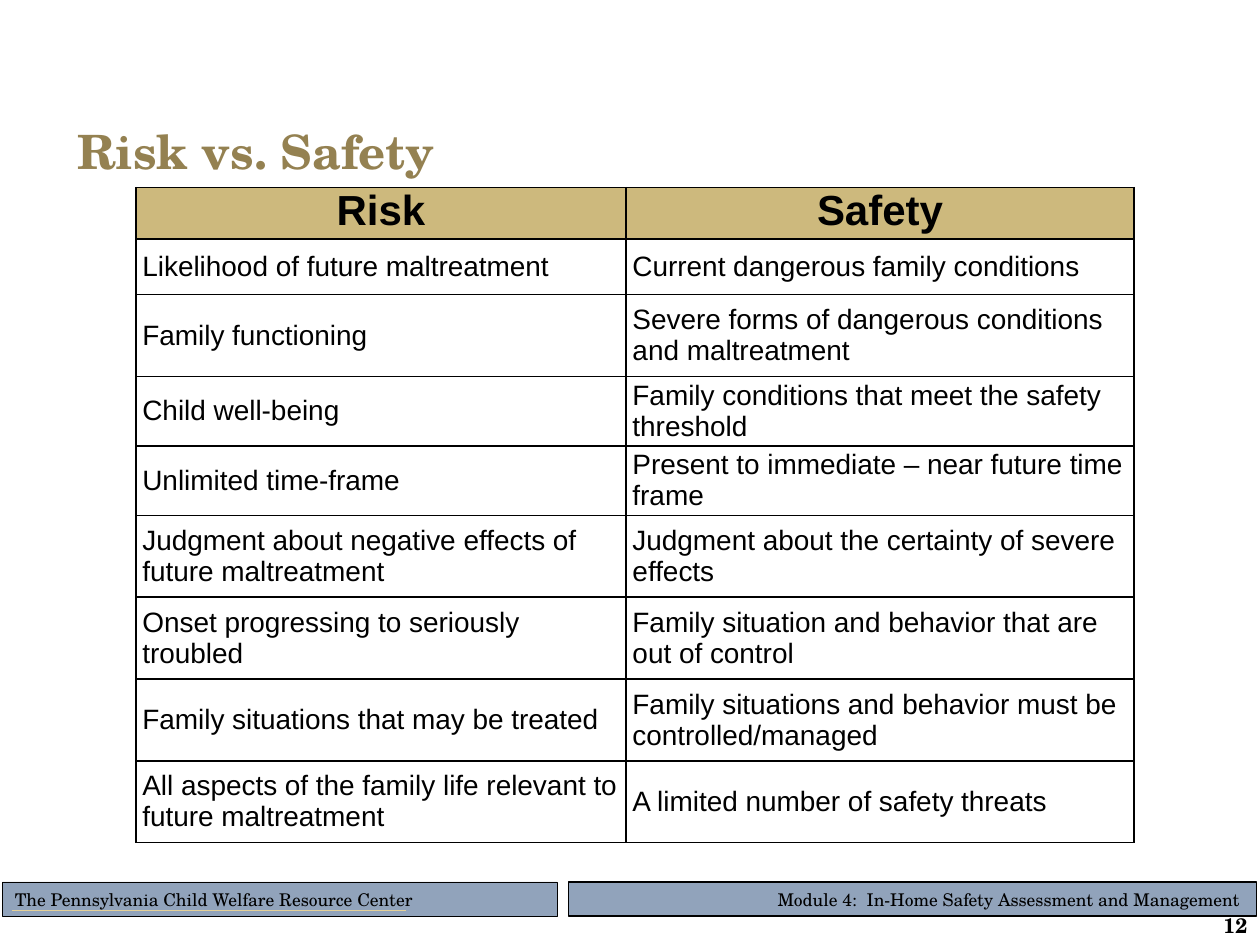
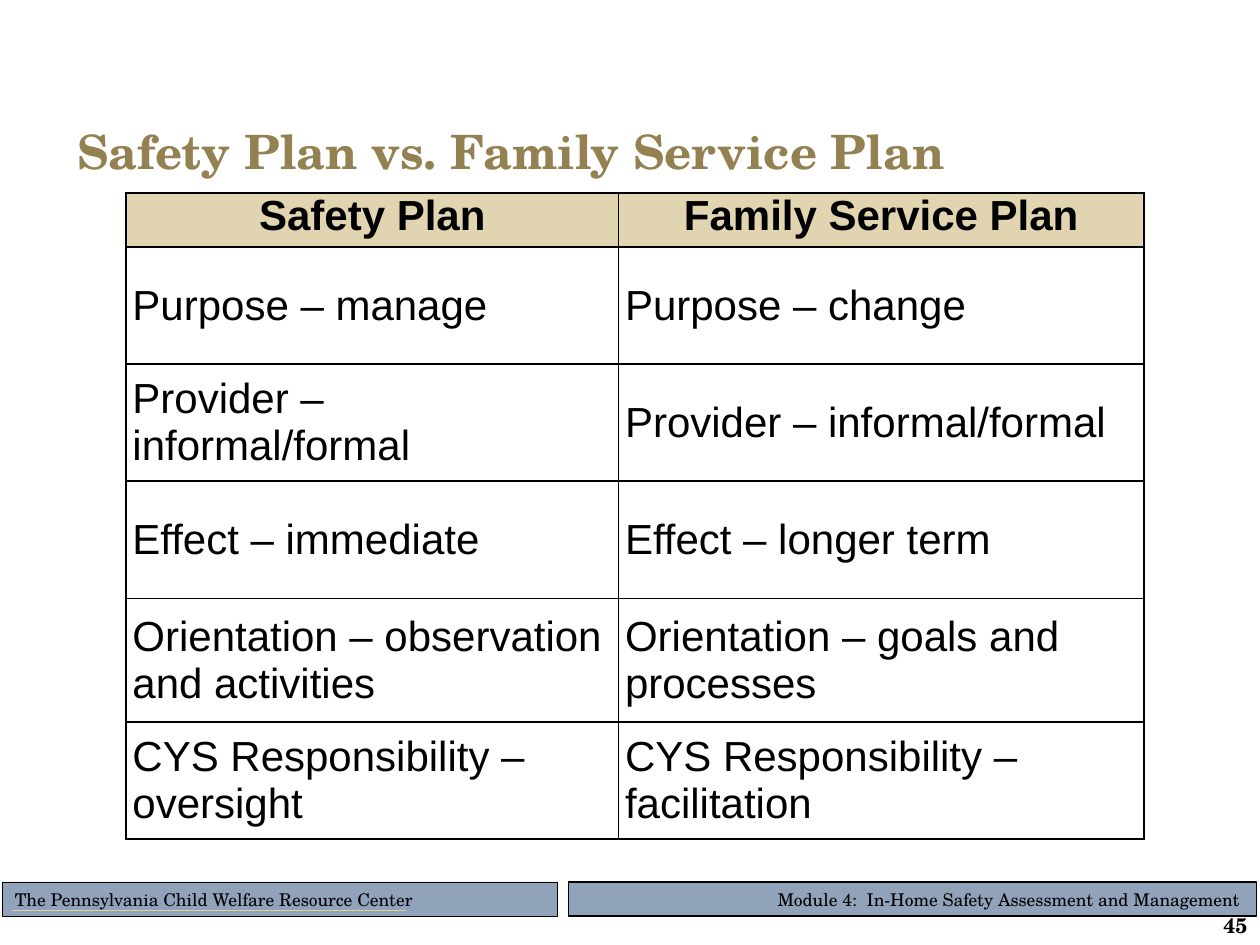
from lxml.etree import SubElement
from pptx import Presentation
from pptx.dml.color import RGBColor
from pptx.enum.shapes import MSO_CONNECTOR, MSO_SHAPE
from pptx.enum.text import MSO_ANCHOR, PP_ALIGN
from pptx.oxml.ns import qn
from pptx.util import Cm, Pt

# Content
SLIDES = [
    {
        "title": "Risk vs. Safety",
        "number": "12",
        "header_fill": RGBColor(0xCD, 0xB9, 0x7D),
        "body_size": 16,
        "left_top": (2.74, 3.78),
        "columns": (9.88, 10.24),
        "heights": (1.04, 1.12, 1.65, 1.4, 1.4, 1.65, 1.65, 1.65, 1.65),
        "rows": [
            ("Risk", "Safety"),
            ("Likelihood of future maltreatment", "Current dangerous family conditions"),
            ("Family functioning", "Severe forms of dangerous conditions and maltreatment"),
            ("Child well-being", "Family conditions that meet the safety threshold"),
            ("Unlimited time-frame", "Present to immediate – near future time frame"),
            ("Judgment about negative effects of future maltreatment",
             "Judgment about the certainty of severe effects"),
            ("Onset progressing to seriously troubled",
             "Family situation and behavior that are out of control"),
            ("Family situations that may be treated",
             "Family situations and behavior must be controlled/managed"),
            ("All aspects of the family life relevant to future maltreatment",
             "A limited number of safety threats"),
        ],
    },
    {
        "title": "Safety Plan vs. Family Service Plan",
        "number": "45",
        "header_fill": RGBColor(0xE1, 0xD4, 0xB1),
        "body_size": 24,
        "left_top": (2.54, 3.89),
        "columns": (9.93, 10.59),
        "heights": (1.09, 2.36, 2.36, 2.36, 2.49, 2.36),
        "rows": [
            ("Safety Plan", "Family Service Plan"),
            ("Purpose – manage", "Purpose – change"),
            ("Provider – informal/formal", "Provider – informal/formal"),
            ("Effect – immediate", "Effect – longer term"),
            ("Orientation – observation and activities", "Orientation – goals and processes"),
            ("CYS Responsibility – oversight", "CYS Responsibility –  facilitation"),
        ],
    },
]

# Shared style
SERIF, SANS = "TeX Gyre Schola", "Arial"
BLACK = RGBColor(0x00, 0x00, 0x00)
BRONZE = RGBColor(0x94, 0x81, 0x51)
SLATE = RGBColor(0x91, 0xA3, 0xBB)
PALE_GOLD = RGBColor(0xE5, 0xD1, 0x99)
HEADER_SIZE = 24
BAND_TOP, BAND_HEIGHT = 17.78, 0.69

# Footer bands: text, left, width, line width, alignment
BANDS = [
    ("Module 4:  In-Home Safety Assessment and Management ", 11.46, 13.87, 0.75, PP_ALIGN.RIGHT),
    ("The Pennsylvania Child Welfare Resource Center", 0.05, 11.18, 0.5, PP_ALIGN.LEFT),
]


def write_text(frame, text, size, font=SERIF, color=BLACK, bold=False,
               align=PP_ALIGN.LEFT, anchor=MSO_ANCHOR.MIDDLE):
    frame.word_wrap = True
    frame.vertical_anchor = anchor
    paragraph = frame.paragraphs[0]
    paragraph.alignment = align
    run = paragraph.add_run()
    run.text = text
    run.font.name = font
    run.font.size = Pt(size)
    run.font.bold = bold
    run.font.color.rgb = color


def add_footer(slide, number):
    for text, left, width, line_width, align in BANDS:
        band = slide.shapes.add_shape(MSO_SHAPE.RECTANGLE, Cm(left), Cm(BAND_TOP),
                                      Cm(width), Cm(BAND_HEIGHT))
        band.shadow.inherit = False
        band.fill.solid()
        band.fill.fore_color.rgb = SLATE
        band.line.color.rgb = BLACK
        band.line.width = Pt(line_width)
        write_text(band.text_frame, text, 10, align=align)

    # Gold rule under the centre's name
    rule = slide.shapes.add_connector(MSO_CONNECTOR.STRAIGHT, Cm(0.25), Cm(18.36),
                                      Cm(8.18), Cm(18.36))
    rule.line.color.rgb = PALE_GOLD
    rule.line.width = Pt(0.75)
    SubElement(rule._element.spPr, qn("a:effectLst"))

    # Slide number
    number_box = slide.shapes.add_textbox(Cm(22.58), Cm(18.39), Cm(2.82), Cm(0.51))
    write_text(number_box.text_frame, number, 12, bold=True, align=PP_ALIGN.RIGHT)


def add_borders(cell):
    properties = cell._tc.get_or_add_tcPr()
    for side in ("lnL", "lnR", "lnT", "lnB"):
        line = SubElement(properties, qn(f"a:{side}"), w=str(Pt(1)))
        fill = SubElement(line, qn("a:solidFill"))
        SubElement(fill, qn("a:srgbClr"), val=str(BLACK))


def format_cell(cell, text, is_header, content):
    cell.margin_left = cell.margin_right = Cm(0.13)
    cell.margin_top = cell.margin_bottom = 0
    add_borders(cell)
    if is_header:
        cell.fill.solid()
        cell.fill.fore_color.rgb = content["header_fill"]
    else:
        cell.fill.background()
    write_text(cell.text_frame, text, HEADER_SIZE if is_header else content["body_size"],
               font=SANS, bold=is_header,
               align=PP_ALIGN.CENTER if is_header else PP_ALIGN.LEFT)
    cell.vertical_anchor = MSO_ANCHOR.TOP if is_header else MSO_ANCHOR.MIDDLE


def add_comparison(slide, content):
    rows, columns, heights = content["rows"], content["columns"], content["heights"]
    left, top = content["left_top"]
    table = slide.shapes.add_table(len(rows), len(columns), Cm(left), Cm(top),
                                   Cm(sum(columns)), Cm(sum(heights))).table
    table.horz_banding = False
    for column, width in zip(table.columns, columns):
        column.width = Cm(width)
    for row_index, (row, height) in enumerate(zip(table.rows, heights)):
        row.height = Cm(height)
        for cell, text in zip(row.cells, rows[row_index]):
            format_cell(cell, text, row_index == 0, content)


def add_title(slide, text):
    title = slide.shapes.title
    title.left, title.top, title.width, title.height = Cm(1.3), Cm(2.21), Cm(22.86), Cm(1.65)
    write_text(title.text_frame, text, 27, color=BRONZE, bold=True)


def main():
    presentation = Presentation()
    presentation.slide_width, presentation.slide_height = Cm(25.4), Cm(19.05)
    title_only = presentation.slide_layouts[5]
    for content in SLIDES:
        slide = presentation.slides.add_slide(title_only)
        add_footer(slide, content["number"])
        add_comparison(slide, content)
        add_title(slide, content["title"])
    presentation.save("out.pptx")


if __name__ == "__main__":
    main()
